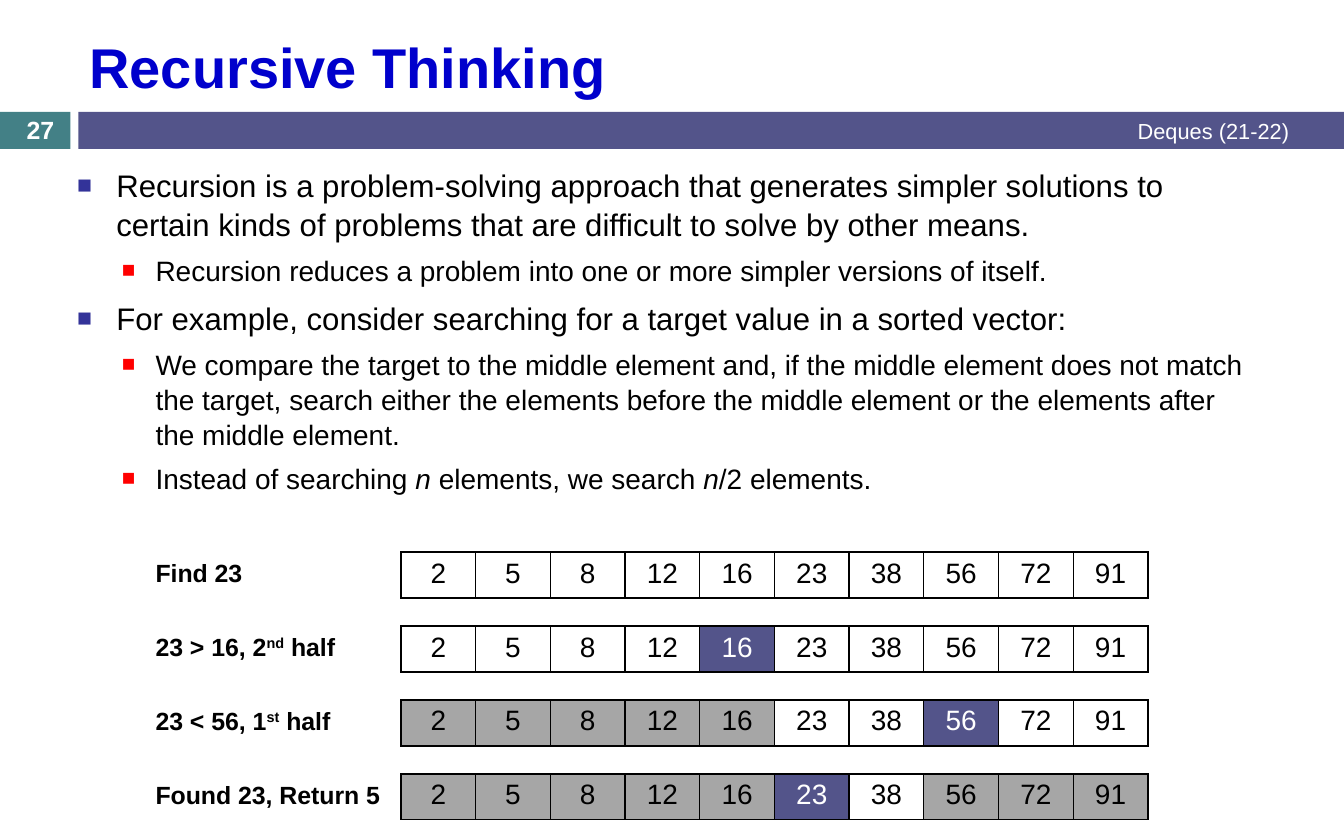
from dataclasses import dataclass
from typing import NamedTuple

from lxml import etree
from pptx import Presentation
from pptx import util as u
from pptx.dml.color import RGBColor
from pptx.enum import shapes, text
from pptx.oxml import ns

WHITE = RGBColor(0xFF, 0xFF, 0xFF)
BLACK = RGBColor(0x00, 0x00, 0x00)
TEAL = RGBColor(0x43, 0x80, 0x86)
INDIGO = RGBColor(0x53, 0x54, 0x8A)
GRAY = RGBColor(0xA6, 0xA6, 0xA6)
TITLE_BLUE = RGBColor(0x00, 0x00, 0xCC)
BULLET_BLUE = RGBColor(0x33, 0x33, 0x99)
BULLET_RED = RGBColor(0xFF, 0x00, 0x00)

FONT = "Arial"
VALUES = (2, 5, 8, 12, 16, 23, 38, 56, 72, 91)
FIRST_ROW_TOP, ROW_STEP = 4.93, 0.66
COLUMN_WIDTH, ROW_HEIGHT = 0.667, 0.41


class Box(NamedTuple):
    left: float
    top: float
    width: float
    height: float

    def lengths(self) -> list:
        return [u.Inches(value) for value in self]


class Piece(NamedTuple):
    words: str
    italic: bool = False
    raised: bool = False


@dataclass(frozen=True)
class Style:
    size: float
    color: RGBColor = BLACK
    bold: bool = False
    align: text.PP_ALIGN = text.PP_ALIGN.LEFT


@dataclass(frozen=True)
class Level:
    style: Style
    indent: float
    hanging: float
    space_before: float
    bullet_color: RGBColor


@dataclass(frozen=True)
class SearchStep:
    label: tuple[Piece, ...]
    middle: int | None = None
    discarded: tuple[int, ...] = ()


TOPIC = Level(Style(20), 0.35, 0.35, 7, BULLET_BLUE)
DETAIL = Level(Style(18), 0.7, 0.3, 5.5, BULLET_RED)

BULLETS = (
    (TOPIC, (Piece("Recursion is a problem-solving approach that generates simpler solutions to "
                   "certain kinds of problems that are difficult to solve by other means."),)),
    (DETAIL, (Piece("Recursion reduces a problem into one or more simpler versions of itself."),)),
    (TOPIC, (Piece("For example, consider searching for a target value in a sorted vector:"),)),
    (DETAIL, (Piece("We compare the target to the middle element and, if the middle element does "
                    "not match the target, search either the elements before the middle element "
                    "or the elements after the middle element."),)),
    (DETAIL, (Piece("Instead of searching "), Piece("n", italic=True),
              Piece(" elements, we search "), Piece("n", italic=True), Piece("/2 elements."))),
)

STEPS = (
    SearchStep((Piece("Find 23"),)),
    SearchStep((Piece("23 > 16, 2"), Piece("nd", raised=True), Piece(" half")), 16),
    SearchStep((Piece("23 < 56, 1"), Piece("st", raised=True), Piece(" half")), 56, VALUES[:5]),
    SearchStep((Piece("Found 23, Return 5"),), 23, VALUES[:5] + VALUES[7:]),
)


def write(paragraph, pieces: tuple[Piece, ...], style: Style) -> None:
    paragraph.alignment = style.align
    for piece in pieces:
        run = paragraph.add_run()
        run.text = piece.words
        run.font.name = FONT
        run.font.size = u.Pt(style.size)
        run.font.bold = style.bold
        run.font.italic = piece.italic
        run.font.color.rgb = style.color
        if piece.raised:
            run.font._element.set("baseline", "30000")


def add_band(slide, box: Box, color: RGBColor) -> None:
    band = slide.shapes.add_shape(shapes.MSO_SHAPE.RECTANGLE, *box.lengths())
    band.shadow.inherit = False
    band.fill.solid()
    band.fill.fore_color.rgb = color
    band.line.fill.background()


def add_frame(slide, box: Box, anchor=text.MSO_ANCHOR.MIDDLE):
    frame = slide.shapes.add_textbox(*box.lengths()).text_frame
    frame.word_wrap = True
    frame.vertical_anchor = anchor
    return frame


def add_label(slide, box: Box, pieces: tuple[Piece, ...], style: Style,
              anchor=text.MSO_ANCHOR.MIDDLE) -> None:
    write(add_frame(slide, box, anchor).paragraphs[0], pieces, style)


def add_bullet(paragraph, level: Level) -> None:
    properties = paragraph._p.get_or_add_pPr()
    properties.set("marL", str(u.Inches(level.indent)))
    properties.set("indent", str(-u.Inches(level.hanging)))
    color = etree.SubElement(properties, ns.qn("a:buClr"))
    etree.SubElement(color, ns.qn("a:srgbClr"), val=str(level.bullet_color))
    etree.SubElement(properties, ns.qn("a:buSzPct"), val="80000")
    etree.SubElement(properties, ns.qn("a:buFont"), typeface=FONT)
    etree.SubElement(properties, ns.qn("a:buChar"), char="■")


def add_bullets(slide, box: Box) -> None:
    frame = add_frame(slide, box, text.MSO_ANCHOR.TOP)
    for index, (level, pieces) in enumerate(BULLETS):
        paragraph = frame.add_paragraph() if index else frame.paragraphs[0]
        paragraph.level = 1 if level is DETAIL else 0
        paragraph.line_spacing = 1.05
        paragraph.space_before = u.Pt(level.space_before)
        write(paragraph, pieces, level.style)
        add_bullet(paragraph, level)


def add_borders(cell) -> None:
    properties = cell._tc.get_or_add_tcPr()
    for index, side in enumerate(("a:lnL", "a:lnR", "a:lnT", "a:lnB")):
        line = etree.Element(ns.qn(side), w=str(u.Pt(1)))
        fill = etree.SubElement(line, ns.qn("a:solidFill"))
        etree.SubElement(fill, ns.qn("a:srgbClr"), val=str(BLACK))
        properties.insert(index, line)


def add_vector(slide, top: float, step: SearchStep) -> None:
    box = Box(3.58, top, COLUMN_WIDTH * len(VALUES), ROW_HEIGHT)
    table = slide.shapes.add_table(1, len(VALUES), *box.lengths()).table
    table.first_row = False
    table.horz_banding = False
    for index, value in enumerate(VALUES):
        table.columns[index].width = u.Inches(COLUMN_WIDTH)
        is_middle = value == step.middle
        cell = table.cell(0, index)
        cell.fill.solid()
        cell.fill.fore_color.rgb = (
            INDIGO if is_middle else GRAY if value in step.discarded else WHITE)
        add_borders(cell)
        style = Style(18, WHITE if is_middle else BLACK, align=text.PP_ALIGN.CENTER)
        write(cell.text_frame.paragraphs[0], (Piece(str(value)),), style)


def main() -> None:
    presentation = Presentation()
    presentation.slide_width = u.Inches(12)
    presentation.slide_height = u.Inches(7.5)
    slide = presentation.slides.add_slide(presentation.slide_layouts[6])

    add_band(slide, Box(0, 1, 0.63, 0.33), TEAL)
    add_band(slide, Box(0.7, 1, 11.3, 0.33), INDIGO)
    add_label(slide, Box(0.7, 0.19, 10.91, 0.8), (Piece("Recursive Thinking"),),
              Style(36, TITLE_BLUE, bold=True))
    add_label(slide, Box(4.5, 0.99, 7.11, 0.35), (Piece("Deques (21-22)"),),
              Style(14, WHITE, align=text.PP_ALIGN.RIGHT))
    add_label(slide, Box(0, 1.01, 0.72, 0.3), (Piece("27"),),
              Style(16, WHITE, bold=True, align=text.PP_ALIGN.CENTER))
    add_bullets(slide, Box(0.59, 1.42, 10.75, 3.33))
    for index, step in enumerate(STEPS):
        top = FIRST_ROW_TOP + index * ROW_STEP
        add_vector(slide, top, step)
        add_label(slide, Box(1.29, top, 2.29, 0.37), step.label, Style(16, bold=True),
                  text.MSO_ANCHOR.TOP)

    presentation.save("out.pptx")


if __name__ == "__main__":
    main()
